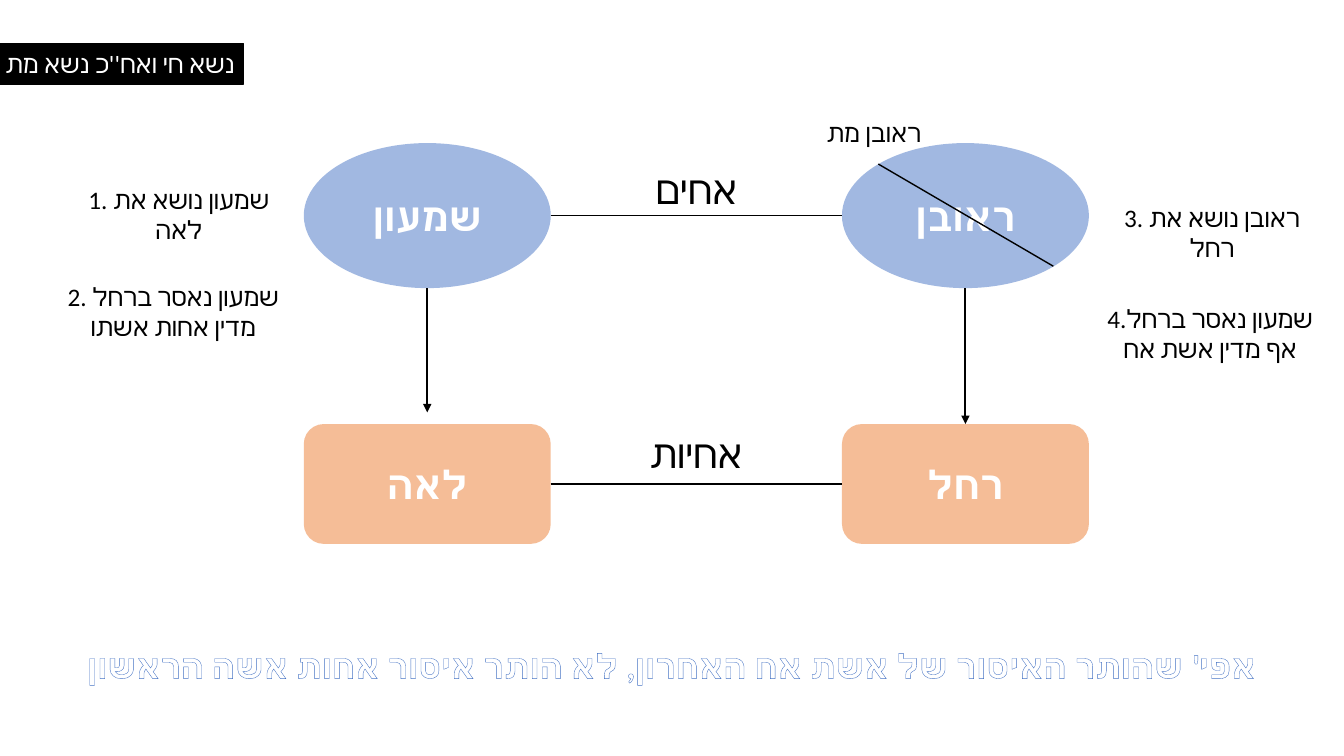
from lxml import etree
from pptx import Presentation
from pptx.dml.color import RGBColor
from pptx.enum import shapes, text
from pptx.oxml.ns import qn
from pptx.util import Pt

COLORS = {"blue": "4472C4", "light blue": "8FAADC", "orange": "ED7D31",
          "black": "000000", "white": "FFFFFF"}
FONT = "Calibri"
NODE_W, LEFT_X, RIGHT_X = 176.4, 217, 601.4
MEN_Y, MEN_H = 102.2, 103.6
WOMEN_Y, WOMEN_H = 302.9, 85.6


def rgb(name):
    return RGBColor.from_string(COLORS[name])


def add_color(parent, name):
    return etree.SubElement(parent, qn("a:srgbClr"), val=COLORS[name])


def write(tf, lines, size, color="black", bold=False, align=text.PP_ALIGN.CENTER):
    tf.word_wrap = True
    for i, line in enumerate(lines):
        p = tf.paragraphs[0] if i == 0 else tf.add_paragraph()
        p.text = line
        p.alignment = align
        p.font.size, p.font.bold, p.font.name = Pt(size), bold, FONT
        p.font.color.rgb = rgb(color)
        # Hebrew takes the complex-script typeface
        latin = p._p.pPr.find(qn("a:defRPr")).find(qn("a:latin"))
        latin.addnext(latin.makeelement(qn("a:cs"), typeface=FONT))


def add_label(slide, box, lines, size=18, bold=False):
    tb = slide.shapes.add_textbox(*map(Pt, box))
    write(tb.text_frame, lines, size, bold=bold)
    tb.text_frame.auto_size = text.MSO_AUTO_SIZE.SHAPE_TO_FIT_TEXT
    return tb


def add_person(slide, kind, box, name, color):
    sp = slide.shapes.add_shape(kind, *map(Pt, box))
    sp.shadow.inherit = False
    sp.fill.solid()
    sp.fill.fore_color.rgb = rgb(color)
    fill = sp._element.spPr.find(qn("a:solidFill"))
    etree.SubElement(fill[0], qn("a:alpha"), val="50000")
    sp.line.fill.background()
    sp.text_frame.vertical_anchor = text.MSO_ANCHOR.MIDDLE
    write(sp.text_frame, [name], 28, "white", bold=True)
    return sp


def add_line(slide, start, end, width=1, arrow=False):
    c = slide.shapes.add_connector(shapes.MSO_CONNECTOR.STRAIGHT,
                                   *map(Pt, start + end))
    c.line.color.rgb = rgb("black")
    c.line.width = Pt(width)
    if arrow:
        etree.SubElement(c.line._get_or_add_ln(), qn("a:tailEnd"), type="triangle")
    etree.SubElement(c._element.spPr, qn("a:effectLst"))
    return c


def add_pair(slide, kind, y, h, names, color, relation, relation_y):
    """Place two siblings at one height, with the name of their relation between."""
    pair = [add_person(slide, kind, (x, y, NODE_W, h), name, color)
            for x, name in zip((LEFT_X, RIGHT_X), names)]
    gap_x = LEFT_X + NODE_W
    add_label(slide, (gap_x, relation_y, RIGHT_X - gap_x, 41), [relation], 28)
    link = add_line(slide, (gap_x, y + h / 2), (RIGHT_X, y + h / 2))
    return pair, link


def add_heading(slide, box):
    title = slide.shapes.title
    title.left, title.top, title.width, title.height = map(Pt, box)
    title.fill.solid()
    title.fill.fore_color.rgb = rgb("black")
    title.line.color.rgb = rgb("black")
    title.line.width = Pt(1)
    tf = title.text_frame
    tf.vertical_anchor = text.MSO_ANCHOR.TOP
    tf.auto_size = text.MSO_AUTO_SIZE.NONE
    # Narrow side margins keep the whole heading on one line
    tf.margin_left, tf.margin_right = Pt(4), Pt(0)
    write(tf, ["נשא חי ואח''כ נשא מת"], 18, "white", align=text.PP_ALIGN.LEFT)


def add_family(slide):
    add_pair(slide, shapes.MSO_SHAPE.OVAL, MEN_Y, MEN_H,
             ("שמעון", "ראובן"), "blue", "אחים", 114.5)
    (leah, rachel), sisters = add_pair(
        slide, shapes.MSO_SHAPE.ROUNDED_RECTANGLE, WOMEN_Y, WOMEN_H,
        ("לאה", "רחל"), "orange", "אחיות", WOMEN_Y)
    sisters.begin_connect(leah, 3)
    sisters.end_connect(rachel, 1)

    men_bottom = MEN_Y + MEN_H
    for x, end_y in ((LEFT_X, 294.5), (RIGHT_X, WOMEN_Y)):
        mid = x + NODE_W / 2
        marriage = add_line(slide, (mid, men_bottom), (mid, end_y), 1.5, arrow=True)
    marriage.end_connect(rachel, 0)

    add_line(slide, (RIGHT_X + 26, MEN_Y + 15), (RIGHT_X + 151, MEN_Y + 88))
    add_label(slide, (571, 80.6, 106.6, 29), ["ראובן מת"])


def add_steps(slide):
    steps = [
        ((38.9, 128.2, 177.8, 29), ["1. שמעון נושא את לאה"]),
        ((26.6, 197.3, 194.4, 51), ["2. שמעון נאסר ברחל", "מדין אחות אשתו"]),
        ((778.3, 141.1, 175, 29), ["3. ראובן נושא את רחל"]),
        ((779.8, 213.1, 169.2, 51), ["4.שמעון נאסר ברחל אף מדין אשת אח"]),
    ]
    for box, lines in steps:
        add_label(slide, box, lines)


def add_conclusion(slide, box):
    """Write the conclusion in outlined letters with a hatched fill."""
    line = "אפי' שהותר האיסור של אשת אח האחרון, לא הותר איסור אחות אשה הראשון"
    tb = add_label(slide, box, [line], 24, bold=True)
    rPr = tb.text_frame.paragraphs[0].runs[0]._r.get_or_add_rPr()
    rPr.set("spc", "25")
    ln = etree.SubElement(rPr, qn("a:ln"), w=str(Pt(1)))
    add_color(etree.SubElement(ln, qn("a:solidFill")), "blue")
    hatch = etree.SubElement(rPr, qn("a:pattFill"), prst="ltDnDiag")
    add_color(etree.SubElement(hatch, qn("a:fgClr")), "light blue")
    add_color(etree.SubElement(hatch, qn("a:bgClr")), "white")


def main():
    prs = Presentation()
    prs.slide_width, prs.slide_height = Pt(960), Pt(540)
    slide = prs.slides.add_slide(prs.slide_layouts[5])
    add_heading(slide, (0, 31, 173.8, 29))
    add_family(slide)
    add_steps(slide)
    add_conclusion(slide, (0, 457.2, 960, 36))
    prs.save("out.pptx")


if __name__ == "__main__":
    main()
